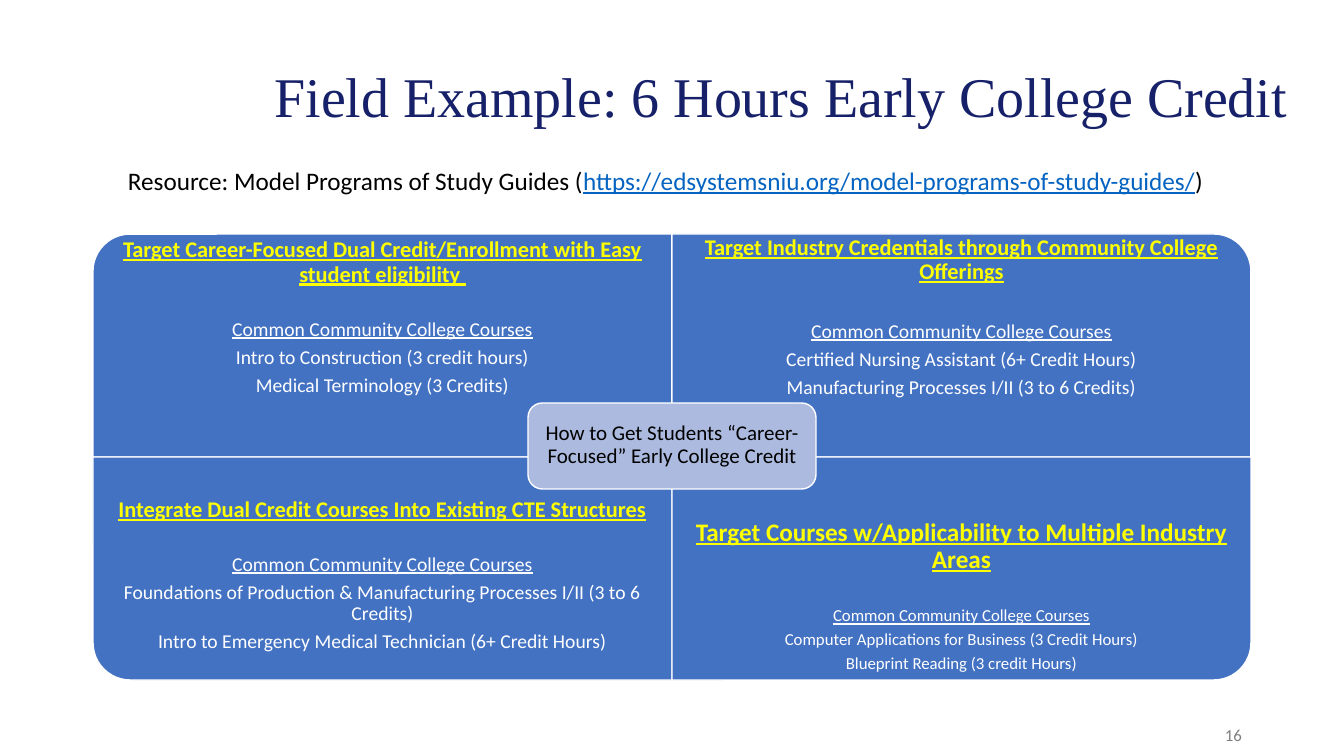
from pptx import Presentation, util as u
from pptx.dml.color import RGBColor
from pptx.enum import shapes, text

SUBHEADING = "Common Community College Courses"
HEADLINE = "Field Example: 6 Hours Early College Credit"
RESOURCE = [
    ("Resource: Model Programs of Study Guides (", "ink", False),
    ("https://edsystemsniu.org/model-programs-of-study-guides/", "address", True),
    (")", "ink", False),
]
HUB = "How to Get Students “Career-Focused” Early College Credit"
PAGE = "16"
QUADRANTS = [
    dict(column=0, row=0, rotation=270, inset=12, lift=0, heading_size=16, course_size=14, gap=23, spacing=4.9,
         heading="Target Career-Focused Dual Credit/Enrollment with Easy student eligibility ",
         courses=["Intro to Construction (3 credit hours)", "Medical Terminology (3 Credits)"]),
    dict(column=1, row=0, rotation=0, inset=12, lift=0, heading_size=16, course_size=14, gap=26, spacing=4.9,
         heading="Target Industry Credentials through Community College Offerings",
         courses=["Certified Nursing Assistant (6+ Credit Hours)", "Manufacturing Processes I/II (3 to 6 Credits)"]),
    dict(column=0, row=1, rotation=180, inset=12, lift=21, heading_size=16, course_size=14, gap=23, spacing=4.9,
         heading="Integrate Dual Credit Courses Into Existing CTE Structures",
         courses=["Foundations of Production & Manufacturing Processes I/II (3 to 6 Credits)",
                  "Intro to Emergency Medical Technician (6+ Credit Hours)"]),
    dict(column=1, row=1, rotation=90, inset=14, lift=0, heading_size=18, course_size=12, gap=24, spacing=4.2,
         heading="Target Courses w/Applicability to Multiple Industry Areas",
         courses=["Computer Applications for Business (3 Credit Hours)", "Blueprint Reading (3 credit Hours)"]),
]
THEME = dict(
    ink="000000", address="0563C1", navy="172169", panel="4372C3", hub="ABBADE",
    white="FFFFFF", yellow="FFFF00", gray="7F7F7F",
    body="Calibri", display="Times New Roman",
    headline_size=40, resource_size=18, hub_size=15, page_size=12, corner=0.167,
)

SCALE = 914400 / 100.8
GRID_LEFT, GRID_TOP = 93, 234
PANEL_WIDTH, PANEL_HEIGHT, COPY_HEIGHT = 579, 223, 167
CENTER, RIGHT = text.PP_ALIGN.CENTER, text.PP_ALIGN.RIGHT


def px(length):
    return u.Emu(round(length * SCALE))


def color(key):
    return RGBColor.from_string(THEME[key])


def add_panel(slide, preset, left, top, width, height, fill, rotation=0):
    if rotation % 180:
        left, top = left + (width - height) / 2, top + (height - width) / 2
        width, height = height, width
    panel = slide.shapes.add_shape(preset, px(left), px(top), px(width), px(height))
    panel.rotation = rotation
    panel.adjustments[0] = THEME["corner"]
    panel.shadow.inherit = False
    panel.fill.solid()
    panel.fill.fore_color.rgb = color(fill)
    panel.line.color.rgb = color("white")
    panel.line.width = u.Pt(1)


def add_frame(slide, left, top, width, height, inset_x=10, inset_y=5, anchor=text.MSO_ANCHOR.MIDDLE):
    frame = slide.shapes.add_textbox(px(left), px(top), px(width), px(height)).text_frame
    frame.word_wrap = True
    frame.vertical_anchor = anchor
    frame.margin_left = frame.margin_right = px(inset_x)
    frame.margin_top = frame.margin_bottom = px(inset_y)
    return frame


def style(paragraph, size, tint, face="body", bold=False, underline=False, align=CENTER, line=0.9, before=None):
    paragraph.alignment = align
    paragraph.line_spacing = line
    if before:
        paragraph.space_before = u.Pt(before)
    font = paragraph.font
    font.size, font.name = u.Pt(size), THEME[face]
    font.color.rgb = color(tint)
    font.bold, font.underline = bold, underline


def add_line(frame, words, size, tint, **options):
    paragraph = frame.paragraphs[0]
    if paragraph.runs:
        paragraph = frame.add_paragraph()
    paragraph.add_run().text = words
    style(paragraph, size, tint, **options)


def add_quadrant(slide, quadrant):
    left = GRID_LEFT + quadrant["column"] * PANEL_WIDTH
    top = GRID_TOP + quadrant["row"] * PANEL_HEIGHT
    add_panel(slide, shapes.MSO_SHAPE.ROUND_1_RECTANGLE, left, top, PANEL_WIDTH, PANEL_HEIGHT,
              "panel", quadrant["rotation"])
    copy_top = top + quadrant["row"] * (PANEL_HEIGHT - COPY_HEIGHT) - quadrant["lift"]
    frame = add_frame(slide, left, copy_top, PANEL_WIDTH, COPY_HEIGHT, quadrant["inset"], quadrant["inset"])
    add_line(frame, quadrant["heading"], quadrant["heading_size"], "yellow", bold=True, underline=True)
    add_line(frame, SUBHEADING, quadrant["course_size"], "white", underline=True, before=quadrant["gap"])
    for course in quadrant["courses"]:
        add_line(frame, course, quadrant["course_size"], "white", before=quadrant["spacing"])


def main():
    deck = Presentation()
    deck.slide_width, deck.slide_height = px(1344), px(756)
    slide = deck.slides.add_slide(deck.slide_layouts[6])

    headline = add_frame(slide, 244, 69, 1074, 61)
    add_line(headline, HEADLINE, THEME["headline_size"], "navy", face="display")

    for quadrant in QUADRANTS:
        add_quadrant(slide, quadrant)

    add_panel(slide, shapes.MSO_SHAPE.ROUNDED_RECTANGLE, 528, 403, 288, 86, "hub")
    hub = add_frame(slide, 532, 407, 280, 77, 6, 6)
    add_line(hub, HUB, THEME["hub_size"], "ink")

    page = add_frame(slide, 950, 715, 302, 40)
    add_line(page, PAGE, THEME["page_size"], "gray", align=RIGHT, line=1.0)

    resource = add_frame(slide, 118, 160, 1134, 40, anchor=text.MSO_ANCHOR.TOP).paragraphs[0]
    style(resource, THEME["resource_size"], "ink", align=text.PP_ALIGN.LEFT, line=1.0)
    for words, tint, underline in RESOURCE:
        run = resource.add_run()
        run.text = words
        run.font.color.rgb = color(tint)
        run.font.underline = underline

    deck.save("out.pptx")


if __name__ == "__main__":
    main()
